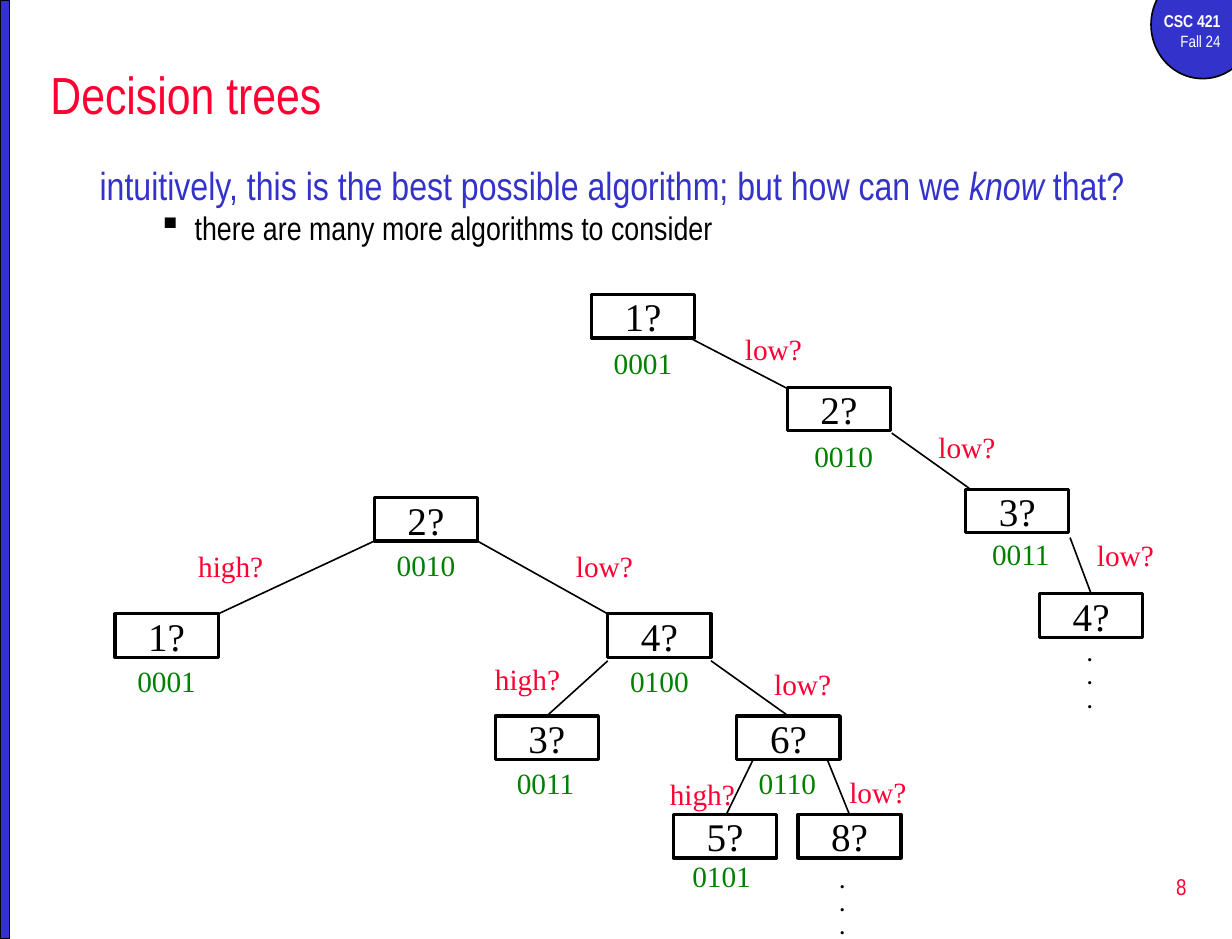
from dataclasses import dataclass

from lxml import etree
from pptx import Presentation
from pptx.dml.color import RGBColor
from pptx.enum.shapes import MSO_CONNECTOR, MSO_SHAPE
from pptx.enum.text import MSO_ANCHOR, PP_ALIGN
from pptx.oxml.ns import qn
from pptx.util import Inches, Pt


@dataclass(frozen=True)
class Theme:
    blue: RGBColor = RGBColor(0x33, 0x33, 0xCC)
    red: RGBColor = RGBColor(0xFF, 0x00, 0x33)
    green: RGBColor = RGBColor(0x00, 0x80, 0x00)
    black: RGBColor = RGBColor(0, 0, 0)
    white: RGBColor = RGBColor(0xFF, 0xFF, 0xFF)
    sans: str = "Arial Narrow"
    serif: str = "Times New Roman"
    title: float = 32
    lead: float = 24
    bullet: float = 20
    node: float = 24
    label: float = 18
    number: float = 14
    dots: float = 12
    course: float = 10.5
    term: float = 10


theme = Theme()
deck = Presentation()
deck.slide_width, deck.slide_height = Inches(10.5), Inches(8)
page = deck.slides.add_slide(deck.slide_layouts[5])


def add_text(box, lines, size, color, face=theme.serif, align=PP_ALIGN.LEFT, bold=False):
    """Write lines in one style into a shape and return its text frame."""
    frame = box.text_frame
    frame.word_wrap = True
    frame.text = "\n".join(lines)
    for para in frame.paragraphs:
        para.alignment = align
        para.font.name, para.font.size, para.font.bold = face, Pt(size), bold
        para.font.color.rgb = color
    return frame


def add_block(kind, left, top, width, height, fill, line_width):
    """Draw a filled, black-edged shape."""
    block = page.shapes.add_shape(kind, Inches(left), Inches(top), Inches(width), Inches(height))
    block.shadow.inherit = False
    block.fill.solid()
    block.fill.fore_color.rgb = fill
    block.line.color.rgb = theme.black
    block.line.width = Pt(line_width)
    return block


# Course badge and side bar
add_block(MSO_SHAPE.OVAL, 9.81, -0.25, 0.88, 0.92, theme.blue, 1)
badge = page.shapes.add_textbox(Inches(9.67), Inches(0.04), Inches(0.83), Inches(0.46))
frame = add_text(badge, ["CSC 421", "Fall 24"], theme.term, theme.white, theme.sans, PP_ALIGN.RIGHT)
frame.paragraphs[0].font.size = Pt(theme.course)
frame.paragraphs[0].font.bold = True
add_block(MSO_SHAPE.RECTANGLE, 0, 0, 0.08, 8, theme.blue, 1)

# Title
title = page.shapes.title
title.left, title.top, title.width, title.height = map(Inches, (0.33, 0.42, 9.92, 0.75))
frame = add_text(title, ["Decision trees"], theme.title, theme.red, theme.sans)
frame.vertical_anchor = MSO_ANCHOR.MIDDLE

# Lead sentence with one bullet
body = page.shapes.add_textbox(Inches(0.75), Inches(1.33), Inches(9.52), Inches(1))
frame = add_text(body, ["", "there are many more algorithms to consider"],
                 theme.lead, theme.blue, theme.sans)
lead, bullet = frame.paragraphs
for text, italic in (
    ("intuitively, this is the best possible algorithm; but how can we ", False),
    ("know", True),
    (" that?", False),
):
    span = lead.add_run()
    span.text = text
    span.font.italic = italic
lead.space_before = Pt(0.2 * theme.lead)
bullet.space_before = Pt(0.2 * theme.bullet)
bullet.line_spacing = 0.8
bullet.font.size = Pt(theme.bullet)
bullet.font.color.rgb = theme.black
for para, margin, hanging in ((lead, 0.38, -0.38), (bullet, 0.81, -0.31)):
    properties = para._p.get_or_add_pPr()
    properties.set("marL", str(Inches(margin)))
    properties.set("indent", str(Inches(hanging)))
mark = etree.Element(qn("a:buChar"), char="▪")
bullet._p.pPr.find(qn("a:defRPr")).addprevious(mark)

# Page number
number = page.shapes.add_textbox(Inches(8.02), Inches(7.29), Inches(2.19), Inches(0.53))
frame = add_text(number, ["8"], theme.number, theme.red, theme.sans, PP_ALIGN.RIGHT)
frame.vertical_anchor = MSO_ANCHOR.MIDDLE

# Branches: start, end, answer, answer position
branches = [
    # balanced tree
    (3.19, 4.61, 1.86, 5.23, "high?", 1.59, 4.62),
    (4.07, 4.61, 5.18, 5.23, "low?", 4.81, 4.62),
    (5.18, 5.63, 4.66, 6.10, "high?", 4.12, 5.58),
    (6.06, 5.63, 6.72, 6.10, "low?", 6.50, 5.63),
    (6.42, 6.47, 6.19, 6.94, "high?", 5.61, 6.56),
    (7.05, 6.47, 7.24, 6.94, "low?", 7.14, 6.55),
    # linear tree
    (5.90, 2.89, 6.71, 3.31, "low?", 6.25, 2.77),
    (7.60, 3.69, 8.26, 4.16, "low?", 7.90, 3.61),
    (9.12, 4.58, 9.30, 5.06, "low?", 9.25, 4.53),
]
for x1, y1, x2, y2, answer, left, top in branches:
    branch = page.shapes.add_connector(
        MSO_CONNECTOR.STRAIGHT, Inches(x1), Inches(y1), Inches(x2), Inches(y2))
    branch.line.color.rgb = theme.black
    branch.line.width = Pt(1)
    etree.SubElement(branch._element.spPr, qn("a:effectLst"))
    box = page.shapes.add_textbox(Inches(left), Inches(top), Inches(0.88), Inches(0.4))
    add_text(box, [answer], theme.label, theme.red)

# Nodes: question, position, code, shift of the code from directly below
node_width, node_height = 0.88, 0.37
nodes = [
    # balanced tree
    ("2?", 3.19, 4.24, "0010", 0, 0),
    ("1?", 0.98, 5.23, "0001", 0, 0),
    ("4?", 5.18, 5.23, "0100", 0, 0),
    ("3?", 4.22, 6.10, "0011", -0.01, 0),
    ("6?", 6.28, 6.10, "0110", -0.01, 0),
    ("5?", 5.74, 6.94, "0101", -0.03, -0.05),
    ("8?", 6.80, 6.94, None, 0, 0),
    # linear tree
    ("1?", 5.04, 2.51, "0001", 0, 0.01),
    ("2?", 6.71, 3.30, "0010", 0.04, 0.01),
    ("3?", 8.23, 4.17, "0011", 0.03, -0.02),
    ("4?", 8.86, 5.06, None, 0, 0),
]
for question, left, top, code, shift_x, shift_y in nodes:
    node = add_block(MSO_SHAPE.RECTANGLE, left, top, node_width, node_height, theme.white, 2)
    frame = add_text(node, [question], theme.node, theme.black, align=PP_ALIGN.CENTER)
    frame.vertical_anchor = MSO_ANCHOR.MIDDLE
    if code:
        box = page.shapes.add_textbox(Inches(left + shift_x), Inches(top + node_height + shift_y),
                                      Inches(node_width), Inches(0.4))
        add_text(box, [code], theme.label, theme.green, align=PP_ALIGN.CENTER)

# Dots where the trees go on
for left, top in ((7.06, 7.35), (9.17, 5.42)):
    box = page.shapes.add_textbox(Inches(left), Inches(top), Inches(0.93), Inches(0.71))
    add_text(box, ["."] * 3, theme.dots, theme.black, bold=True)

deck.save("out.pptx")
